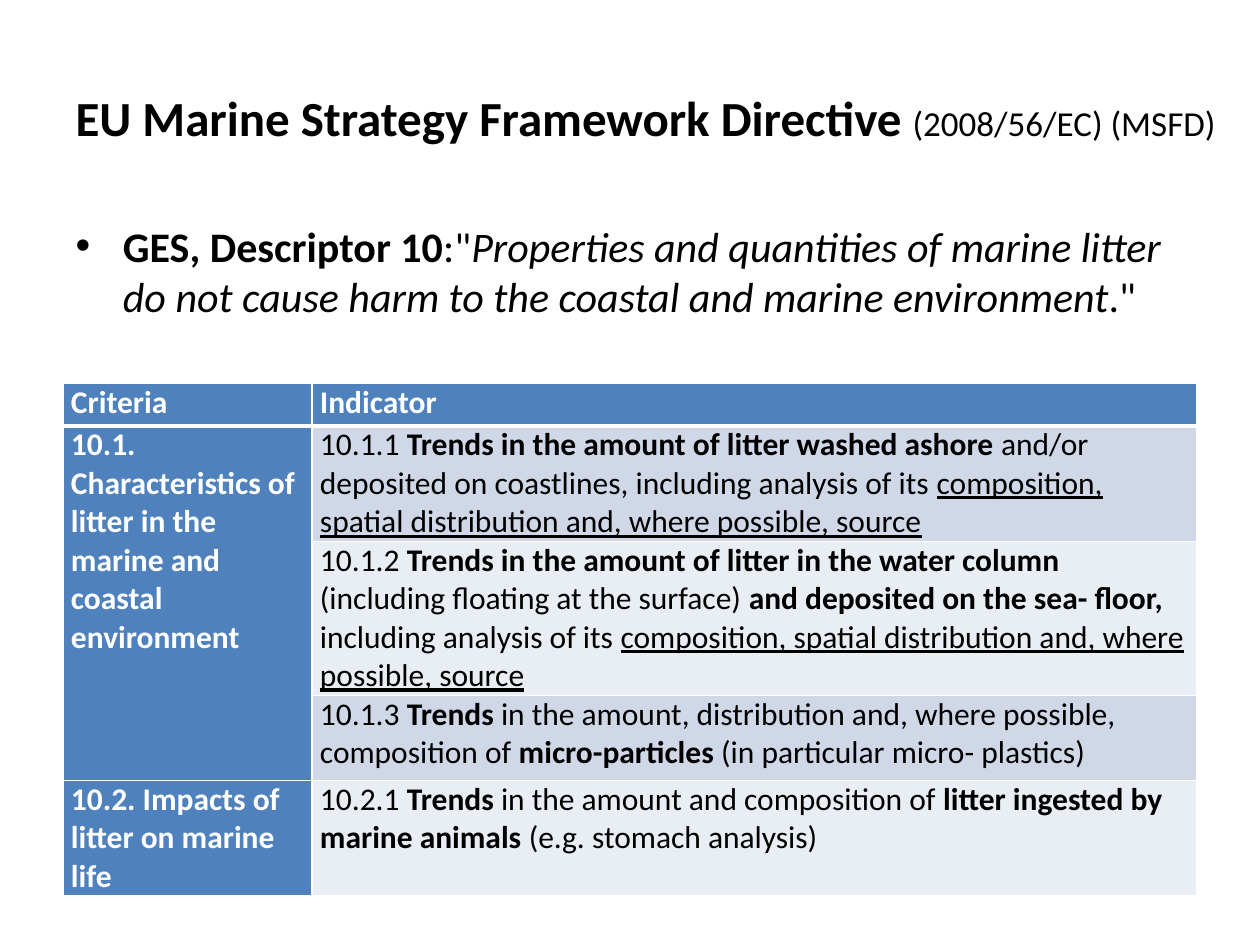
from lxml.etree import SubElement
from pptx import Presentation
from pptx.dml.color import RGBColor
from pptx.enum.text import MSO_ANCHOR, MSO_AUTO_SIZE, PP_ALIGN
from pptx.oxml.ns import qn
from pptx.util import Emu, Pt

PX = 914400 / 126
COLORS = {"black": "000000", "white": "FFFFFF", "blue": "4F81BD",
          "band_dark": "D0D8E8", "band_light": "E9EDF4"}


def px(length):
    return Emu(round(length * PX))


def write(paragraph, spans, size, color="black"):
    """Fill a paragraph from (text, style) pairs; style holds b, i or u."""
    paragraph.font.name = "Calibri"
    paragraph.font.size = Pt(size)
    paragraph.font.color.rgb = RGBColor.from_string(COLORS[color])
    for text, style in spans:
        span = paragraph.add_run()
        span.text = text
        span.font.name = "Calibri"
        span.font.size = Pt(size)
        span.font.color.rgb = RGBColor.from_string(COLORS[color])
        span.font.bold = "b" in style
        span.font.italic = "i" in style
        span.font.underline = "u" in style


deck = Presentation()
deck.slide_width, deck.slide_height = px(1260), px(945)
page = deck.slides.add_slide(deck.slide_layouts[1])

# Title and body
title, body = page.placeholders
for box, (left, top, width, height) in ((title, (63, 38, 1182, 157)),
                                        (body, (63, 214, 1134, 118))):
    box.left, box.top, box.width, box.height = px(left), px(top), px(width), px(height)
    box.text_frame.auto_size = MSO_AUTO_SIZE.NONE
    box.text_frame.word_wrap = True

title.text_frame.vertical_anchor = MSO_ANCHOR.MIDDLE
heading = title.text_frame.paragraphs[0]
heading.alignment = PP_ALIGN.LEFT
write(heading, [("EU Marine Strategy Framework Directive ", "b"),
                ("(2008/56/EC) (MSFD)", "")], 28)
heading.runs[1].font.size = Pt(20)

write(body.text_frame.paragraphs[0], [
    ("GES, Descriptor 10", "b"),
    (":\"", ""),
    ("Properties and quantities of marine litter do not cause harm "
     "to the coastal and marine environment", "i"),
    (".\"", ""),
], 24)

# Criteria and indicators
analysed = ("composition, spatial distribution and, where possible, source", "u")
rows = [
    ("Criteria", [("Indicator", "b")]),
    ("10.1. Characteristics of litter in the marine and coastal environment", [
        ("10.1.1 ", ""),
        ("Trends in the amount of litter washed ashore ", "b"),
        ("and/or deposited on coastlines, including analysis of its ", ""),
        analysed]),
    ("", [
        ("10.1.2 ", ""),
        ("Trends in the amount of litter in the water column ", "b"),
        ("(including floating at the surface) ", ""),
        ("and deposited on the sea- floor, ", "b"),
        ("including analysis of its ", ""),
        analysed]),
    ("", [
        ("10.1.3 ", ""),
        ("Trends", "b"),
        (" in the amount, distribution and, where possible, composition of ", ""),
        ("micro-particles", "b"),
        (" (in particular micro- plastics)", "")]),
    ("10.2. Impacts of litter on marine life", [
        ("10.2.1 ", ""),
        ("Trends ", "b"),
        ("in the amount and composition of", ""),
        (" litter ingested by marine animals ", "b"),
        ("(e.g. stomach analysis)", "")]),
]
row_heights = [43, 115, 154, 85, 115]
column_widths = [249, 885]

table = page.shapes.add_table(len(rows), 2, px(63), px(383), px(sum(column_widths)),
                              px(sum(row_heights))).table
for column, width in zip(table.columns, column_widths):
    column.width = px(width)
for row, height in zip(table.rows, row_heights):
    row.height = px(height)

for r, (criterion, indicator) in enumerate(rows):
    band = "band_dark" if r % 2 else "band_light"
    for c, spans in enumerate(([(criterion, "b")], indicator)):
        cell = table.cell(r, c)
        is_heading = r == 0 or c == 0
        cell.margin_left = cell.margin_right = px(8)
        cell.margin_top = cell.margin_bottom = 0
        paragraph = cell.text_frame.paragraphs[0]
        paragraph.space_before, paragraph.space_after = Pt(2), Pt(1)
        if spans[0][0]:
            write(paragraph, spans, 18, "white" if is_heading else "black")

        properties = cell._tc.get_or_add_tcPr()
        for side in ("L", "R", "T", "B"):
            thick = (r == 0 and side == "B") or (r == 1 and side == "T")
            line = SubElement(properties, qn(f"a:ln{side}"), w=str(Pt(3 if thick else 1)))
            fill = SubElement(line, qn("a:solidFill"))
            SubElement(fill, qn("a:srgbClr"), val=COLORS["white"])
        cell.fill.solid()
        cell.fill.fore_color.rgb = RGBColor.from_string(
            COLORS["blue" if is_heading else band])

table.cell(1, 0).merge(table.cell(3, 0))

deck.save("out.pptx")
